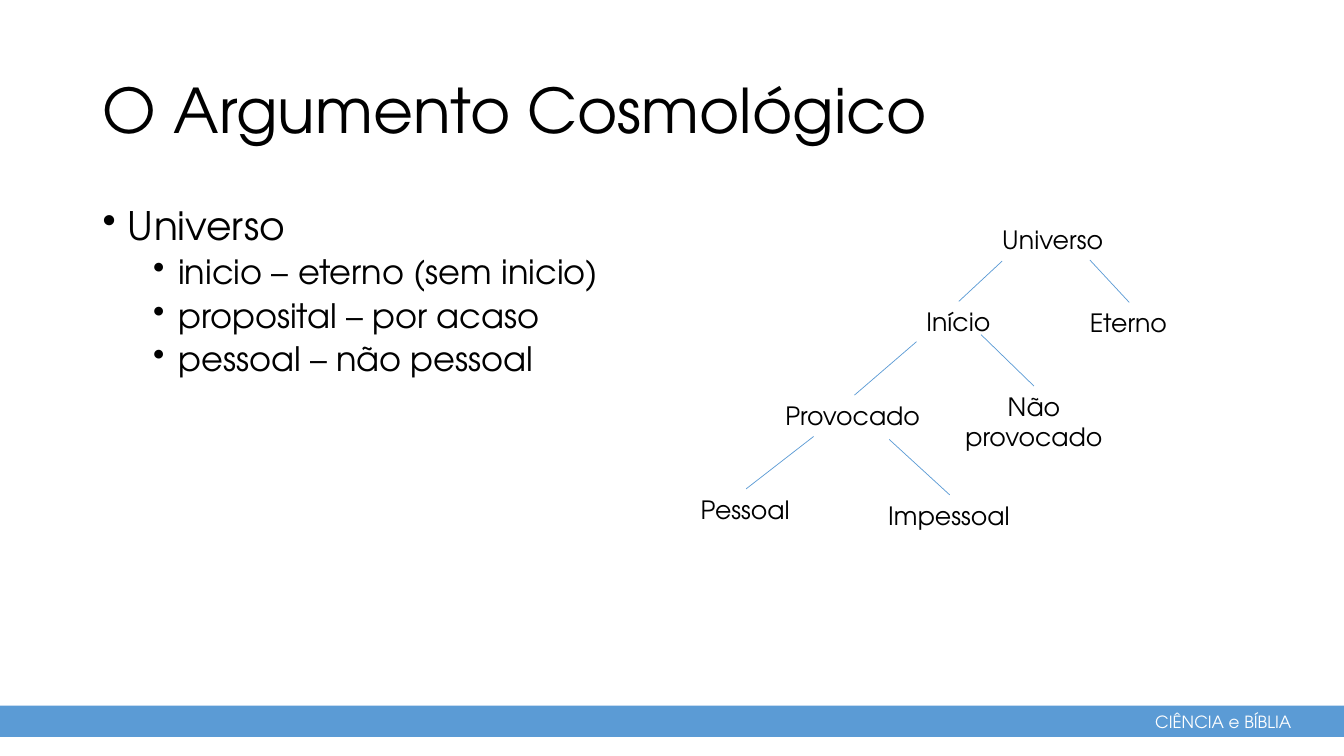
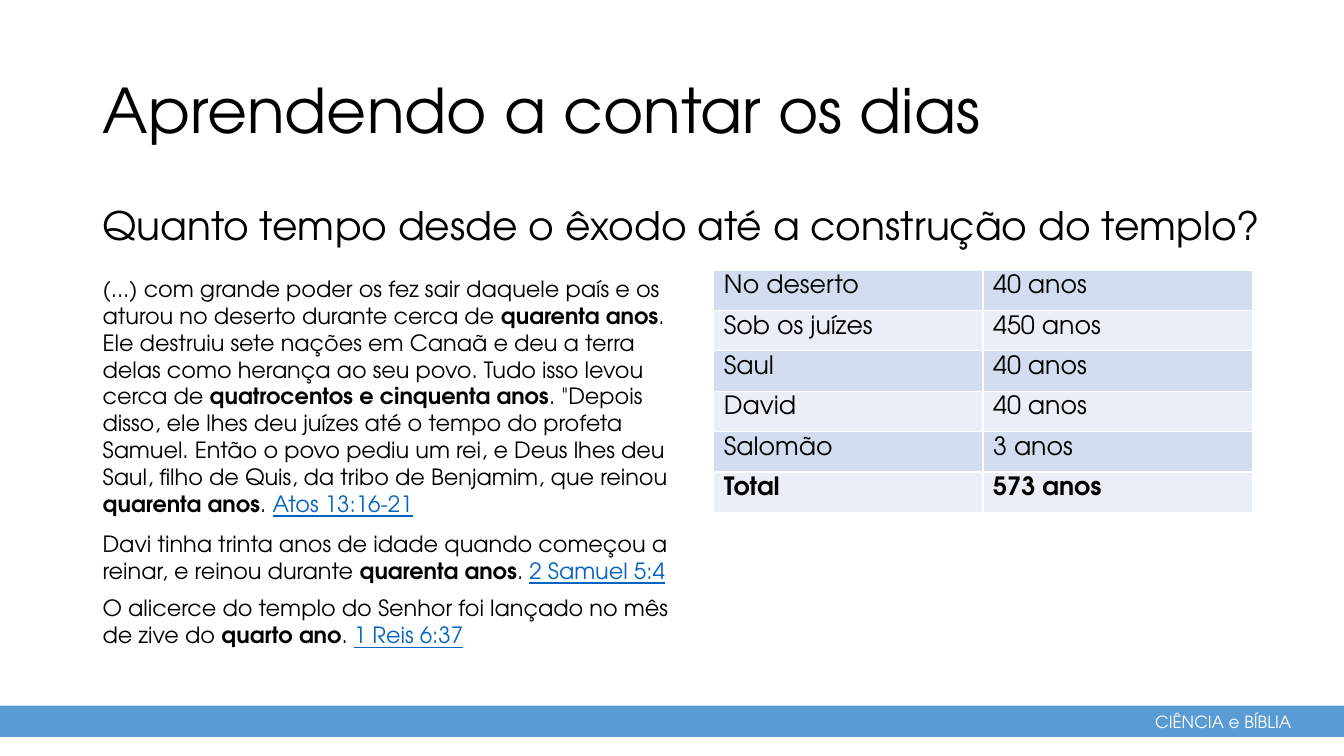
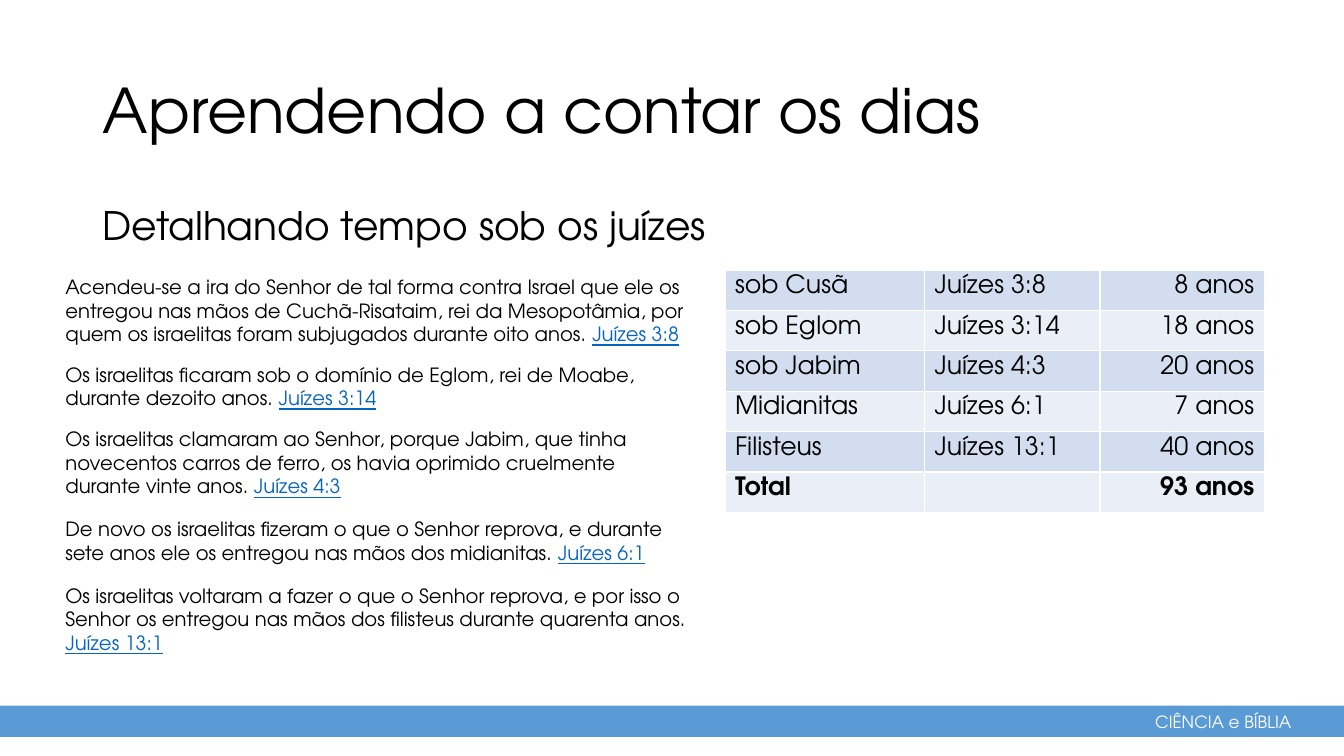
from typing import NamedTuple, Optional

from lxml.etree import SubElement
from pptx import Presentation
from pptx.dml.color import RGBColor
from pptx.enum.shapes import MSO_CONNECTOR, MSO_SHAPE
from pptx.enum.text import MSO_ANCHOR, MSO_AUTO_SIZE as AutoSize, PP_ALIGN as Align
from pptx.oxml.ns import qn
from pptx.shapes.autoshape import Shape
from pptx.slide import Slide
from pptx.table import _Cell as Cell
from pptx.text.text import _Paragraph as Paragraph
from pptx.util import Inches, Pt

FONT = "TeX Gyre Adventor"
BLUE = RGBColor(0x5B, 0x9B, 0xD5)
LINK_BLUE = RGBColor(0x05, 0x63, 0xC1)
BLACK = RGBColor(0, 0, 0)
WHITE = RGBColor(0xFF, 0xFF, 0xFF)
ROW_FILLS = (RGBColor(0xD2, 0xDE, 0xEF), RGBColor(0xEA, 0xEF, 0xF7))
ROW_HEIGHT = 0.4


class Box(NamedTuple):
    """Position and size in inches."""
    left: float
    top: float
    width: float
    height: float

    def lengths(self) -> list[Inches]:
        """Return the four values as lengths."""
        return [Inches(value) for value in self]


class Run(NamedTuple):
    """A piece of a passage."""
    text: str
    bold: bool = False
    link: bool = False


class Passage(NamedTuple):
    """A quotation with its vertical place."""
    top: float
    height: float
    runs: list[Run]


class Node(NamedTuple):
    """A tree label and the start of the line that reaches it."""
    text: str
    box: Box
    line_start: Optional[tuple[float, float]] = None


class Column(NamedTuple):
    """Width and alignment of a table column."""
    width: float
    align: Align = Align.LEFT


def style(paragraph: Paragraph, size: float, color: RGBColor = BLACK) -> None:
    """Set the font of a paragraph."""
    font = paragraph.font
    font.name, font.size, font.color.rgb = FONT, Pt(size), color


def add_text(slide: Slide, box: Box, lines: list[str], size: float,
             color: RGBColor = BLACK, wrap: bool = True) -> Shape:
    """Add a text box with one paragraph per line."""
    shape = slide.shapes.add_textbox(*box.lengths())
    frame = shape.text_frame
    frame.word_wrap = wrap
    frame.auto_size = AutoSize.NONE if wrap else AutoSize.SHAPE_TO_FIT_TEXT
    frame.text = "\n".join(lines)
    for paragraph in frame.paragraphs:
        style(paragraph, size, color)
    return shape


def add_slide(presentation: Presentation, title: str) -> Slide:
    """Add a slide with the shared title, band and footer."""
    slide = presentation.slides.add_slide(presentation.slide_layouts[5])
    band = slide.shapes.add_shape(MSO_SHAPE.RECTANGLE, *Box(0, 7, 13.33, 0.31).lengths())
    band.shadow.inherit = False
    band.fill.solid()
    band.fill.fore_color.rgb = BLUE
    band.line.fill.background()
    add_text(slide, Box(11.36, 7.01, 1.57, 0.3), ["CIÊNCIA e BÍBLIA"], 12, WHITE, wrap=False)
    shape = slide.shapes.title
    shape.left, shape.top, shape.width, shape.height = Box(0.92, 0.4, 11.5, 1.45).lengths()
    frame = shape.text_frame
    frame.text = title
    frame.vertical_anchor = MSO_ANCHOR.MIDDLE
    frame.auto_size = AutoSize.NONE
    paragraph = frame.paragraphs[0]
    paragraph.alignment, paragraph.line_spacing = Align.LEFT, 0.9
    style(paragraph, 44)
    return slide


def add_subtitle(slide: Slide, text: str) -> None:
    """Add the line below the title."""
    shape = add_text(slide, Box(0.92, 1.85, 11.87, 0.86), [text], 28)
    shape.text_frame.paragraphs[0].line_spacing = 1.2


def add_bullets(slide: Slide, box: Box, heading: str, items: list[str]) -> None:
    """Add a heading bullet with second-level items."""
    frame = slide.shapes.add_textbox(*box.lengths()).text_frame
    frame.word_wrap = True
    frame.text = "\n".join([heading, *items])
    for index, paragraph in enumerate(frame.paragraphs):
        level = min(index, 1)
        paragraph.level = level
        paragraph.line_spacing = 0.9
        paragraph.space_before = Pt(5 * level)
        properties = paragraph._p.get_or_add_pPr()
        properties.set("marL", str(Inches(0.25 + 0.5 * level)))
        properties.set("indent", str(Inches(-0.25)))
        SubElement(properties, qn("a:buChar")).set("char", "•")
        style(paragraph, 28 - 4 * level)


def add_tree(slide: Slide, nodes: list[Node]) -> None:
    """Add the labels and the lines joined to their tops."""
    for node in nodes:
        label = add_text(slide, node.box, node.text.split("\n"), 18, wrap=False)
        for paragraph in label.text_frame.paragraphs:
            paragraph.alignment = Align.CENTER if "\n" in node.text else Align.LEFT
        if node.line_start is None:
            continue
        start = [Inches(value) for value in node.line_start]
        line = slide.shapes.add_connector(MSO_CONNECTOR.STRAIGHT, *start, *start)
        line.end_connect(label, 0)
        line.line.color.rgb = BLUE
        line.line.width = Pt(0.5)
        SubElement(line._element.spPr, qn("a:effectLst"))


def add_passages(slide: Slide, left: float, width: float, size: float,
                 passages: list[Passage]) -> None:
    """Add one text box per passage."""
    for passage in passages:
        box = Box(left, passage.top, width, passage.height)
        paragraph = add_text(slide, box, [""], size).text_frame.paragraphs[0]
        for piece in passage.runs:
            run = paragraph.add_run()
            run.text = piece.text
            if piece.bold:
                run.font.bold = True
            if piece.link:
                run.font.underline = True
                run.font.color.rgb = LINK_BLUE


def set_borders(cell: Cell) -> None:
    """Give a cell white borders."""
    properties = cell._tc.get_or_add_tcPr()
    for side in ("lnL", "lnR", "lnT", "lnB"):
        border = SubElement(properties, qn(f"a:{side}"), w=str(Pt(1)))
        fill = SubElement(border, qn("a:solidFill"))
        SubElement(fill, qn("a:srgbClr"), val=str(WHITE))


def add_years_table(slide: Slide, left: float, columns: list[Column],
                    rows: list[tuple[str, ...]]) -> None:
    """Add a banded table whose last row is a bold total."""
    width = sum(column.width for column in columns)
    box = Box(left, 2.68, width, ROW_HEIGHT * len(rows))
    table = slide.shapes.add_table(len(rows), len(columns), *box.lengths()).table
    table.first_row = table.horz_banding = False
    for index, column in enumerate(columns):
        table.columns[index].width = Inches(column.width)
    for row_index, row in enumerate(rows):
        table.rows[row_index].height = Inches(ROW_HEIGHT)
        for column_index, text in enumerate(row):
            cell = table.cell(row_index, column_index)
            set_borders(cell)
            cell.fill.solid()
            cell.fill.fore_color.rgb = ROW_FILLS[row_index % 2]
            cell.text = text
            paragraph = cell.text_frame.paragraphs[0]
            paragraph.alignment = columns[column_index].align
            style(paragraph, 18)
            paragraph.font.bold = row_index == len(rows) - 1


TREE = [
    Node("Universo", Box(9.84, 2.18, 1.22, 0.4)),
    Node("Início", Box(9.09, 2.99, 0.84, 0.4), (9.94, 2.59)),
    Node("Eterno", Box(10.71, 3, 0.98, 0.4), (10.81, 2.58)),
    Node("Provocado", Box(7.69, 3.92, 1.57, 0.4), (9.09, 3.39)),
    Node("Não\nprovocado", Box(9.46, 3.83, 1.59, 0.71), (9.73, 3.32)),
    Node("Pessoal", Box(6.85, 4.85, 1.1, 0.4), (8.07, 4.33)),
    Node("Impessoal", Box(8.71, 4.91, 1.42, 0.4), (8.82, 4.36)),
]

EXODUS_PASSAGES = [
    Passage(2.68, 2.52, [
        Run("(...) com grande poder os fez sair daquele país e os aturou no deserto "
            "durante cerca de "),
        Run("quarenta anos", bold=True),
        Run(". Ele destruiu sete nações em Canaã e deu a terra delas como herança ao seu "
            "povo. Tudo isso levou cerca de "),
        Run("quatrocentos e cinquenta anos", bold=True),
        Run('. "Depois disso, ele lhes deu juízes até o tempo do profeta Samuel. Então o '
            "povo pediu um rei, e Deus lhes deu Saul, filho de Quis, da tribo de Benjamim, "
            "que reinou "),
        Run("quarenta anos", bold=True), Run(". "), Run("Atos 13:16-21", link=True)]),
    Passage(5.21, 0.64, [
        Run("Davi tinha trinta anos de idade quando começou a reinar, e reinou durante "),
        Run("quarenta anos", bold=True), Run(". "), Run("2 Samuel 5:4", link=True)]),
    Passage(5.85, 0.64, [
        Run("O alicerce do templo do Senhor foi lançado no mês de zive do "),
        Run("quarto ano", bold=True), Run(". "), Run("1 Reis 6:37", link=True)]),
]

EXODUS_YEARS = [
    ("No deserto", "40 anos"),
    ("Sob os juízes", "450 anos"),
    ("Saul", "40 anos"),
    ("David", "40 anos"),
    ("Salomão", "3 anos"),
    ("Total", "573 anos"),
]

JUDGES_PASSAGES = [
    Passage(2.68, 0.81, [
        Run("Acendeu-se a ira do Senhor de tal forma contra Israel que ele os entregou nas "
            "mãos de Cuchã-Risataim, rei da Mesopotâmia, por quem os israelitas foram "
            "subjugados durante oito anos. "),
        Run("Juízes 3:8", link=True)]),
    Passage(3.55, 0.57, [
        Run("Os israelitas ficaram sob o domínio de Eglom, rei de Moabe, durante dezoito "
            "anos. "),
        Run("Juízes 3:14", link=True)]),
    Passage(4.19, 0.81, [
        Run("Os israelitas clamaram ao Senhor, porque Jabim, que tinha novecentos carros de "
            "ferro, os havia oprimido cruelmente durante vinte anos. "),
        Run("Juízes 4:3", link=True)]),
    Passage(5.08, 0.57, [
        Run("De novo os israelitas fizeram o que o Senhor reprova, e durante sete anos ele "
            "os entregou nas mãos dos midianitas. "),
        Run("Juízes 6:1", link=True)]),
    Passage(5.74, 0.81, [
        Run("Os israelitas voltaram a fazer o que o Senhor reprova, e por isso o Senhor os "
            "entregou nas mãos dos filisteus durante quarenta anos. "),
        Run("Juízes 13:1", link=True)]),
]

JUDGES_YEARS = [
    ("sob Cusã", "Juízes 3:8", "8 anos"),
    ("sob Eglom", "Juízes 3:14", "18 anos"),
    ("sob Jabim", "Juízes 4:3", "20 anos"),
    ("Midianitas", "Juízes 6:1", "7 anos"),
    ("Filisteus", "Juízes 13:1", "40 anos"),
    ("Total", "", "93 anos"),
]


def main() -> None:
    """Build and save the three slides."""
    presentation = Presentation()
    presentation.slide_width, presentation.slide_height = Inches(13.33), Inches(7.5)

    slide = add_slide(presentation, "O Argumento Cosmológico")
    add_bullets(slide, Box(0.92, 2, 7.14, 4.76), "Universo", [
        "inicio – eterno (sem inicio)", "proposital – por acaso", "pessoal – não pessoal"])
    add_tree(slide, TREE)

    counting_title = "Aprendendo a contar os dias"
    slide = add_slide(presentation, counting_title)
    add_subtitle(slide, "Quanto tempo desde o êxodo até a construção do templo?")
    add_passages(slide, 0.92, 6.03, 16, EXODUS_PASSAGES)
    add_years_table(slide, 7.08, [Column(2.67)] * 2, EXODUS_YEARS)

    slide = add_slide(presentation, counting_title)
    add_subtitle(slide, "Detalhando tempo sob os juízes")
    add_passages(slide, 0.55, 6.43, 14, JUDGES_PASSAGES)
    add_years_table(slide, 7.19, [Column(1.98), Column(1.74), Column(1.63, Align.RIGHT)],
                    JUDGES_YEARS)

    presentation.save("out.pptx")


if __name__ == "__main__":
    main()
